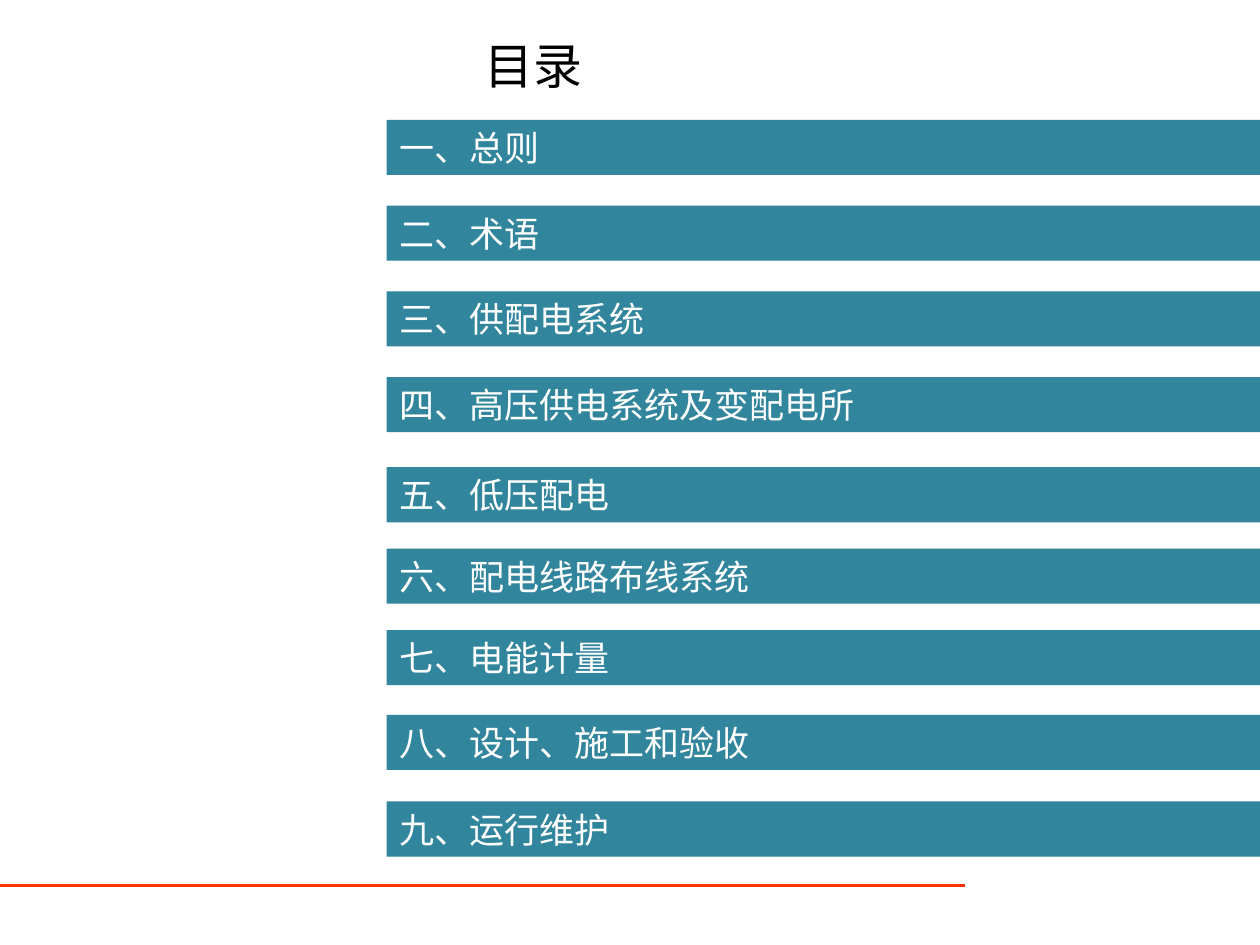
"""Build the contents slide with nine chapter bars."""
from lxml.etree import SubElement
from pptx import Presentation
from pptx.dml.color import RGBColor
from pptx.enum.shapes import MSO_CONNECTOR, MSO_SHAPE
from pptx.enum.text import MSO_ANCHOR, PP_ALIGN
from pptx.oxml.ns import qn
from pptx.util import Pt


def color(value):
    return RGBColor.from_string(value)


def write(shape, text, size, font_color):
    text_frame = shape.text_frame
    text_frame.word_wrap = True
    text_frame.vertical_anchor = MSO_ANCHOR.MIDDLE
    text_frame.text = text
    paragraph = text_frame.paragraphs[0]
    paragraph.alignment = PP_ALIGN.LEFT
    font = paragraph.runs[0].font
    font.name = "Calibri"
    font.size = Pt(size)
    font.color.rgb = color(font_color)


presentation = Presentation()
presentation.slide_width = Pt(720)
presentation.slide_height = Pt(540)
slide = presentation.slides.add_slide(presentation.slide_layouts[6])

rule = slide.shapes.add_connector(
    MSO_CONNECTOR.STRAIGHT, Pt(0), Pt(506), Pt(551.5), Pt(506)
)
rule.line.color.rgb = color("FF3300")
rule.line.width = Pt(1.75)
SubElement(rule._element.spPr, qn("a:effectLst"))

title = slide.shapes.add_textbox(Pt(270), Pt(0), Pt(450), Pt(74))
write(title, "目录", 28, "000000")

chapters = [
    ("一、总则", 68.5),
    ("二、术语", 117.5),
    ("三、供配电系统", 166.5),
    ("四、高压供电系统及变配电所", 215.5),
    ("五、低压配电", 267),
    ("六、配电线路布线系统", 313.5),
    ("七、电能计量", 360),
    ("八、设计、施工和验收", 408.5),
    ("九、运行维护", 458),
]
bar_left = 221
for chapter, top in chapters:
    bar = slide.shapes.add_shape(
        MSO_SHAPE.RECTANGLE, Pt(bar_left), Pt(top), Pt(720 - bar_left), Pt(31.5)
    )
    bar.shadow.inherit = False
    bar.fill.solid()
    bar.fill.fore_color.rgb = color("31859C")
    bar.line.fill.background()
    write(bar, chapter, 20, "FFFFFF")

presentation.save("out.pptx")
